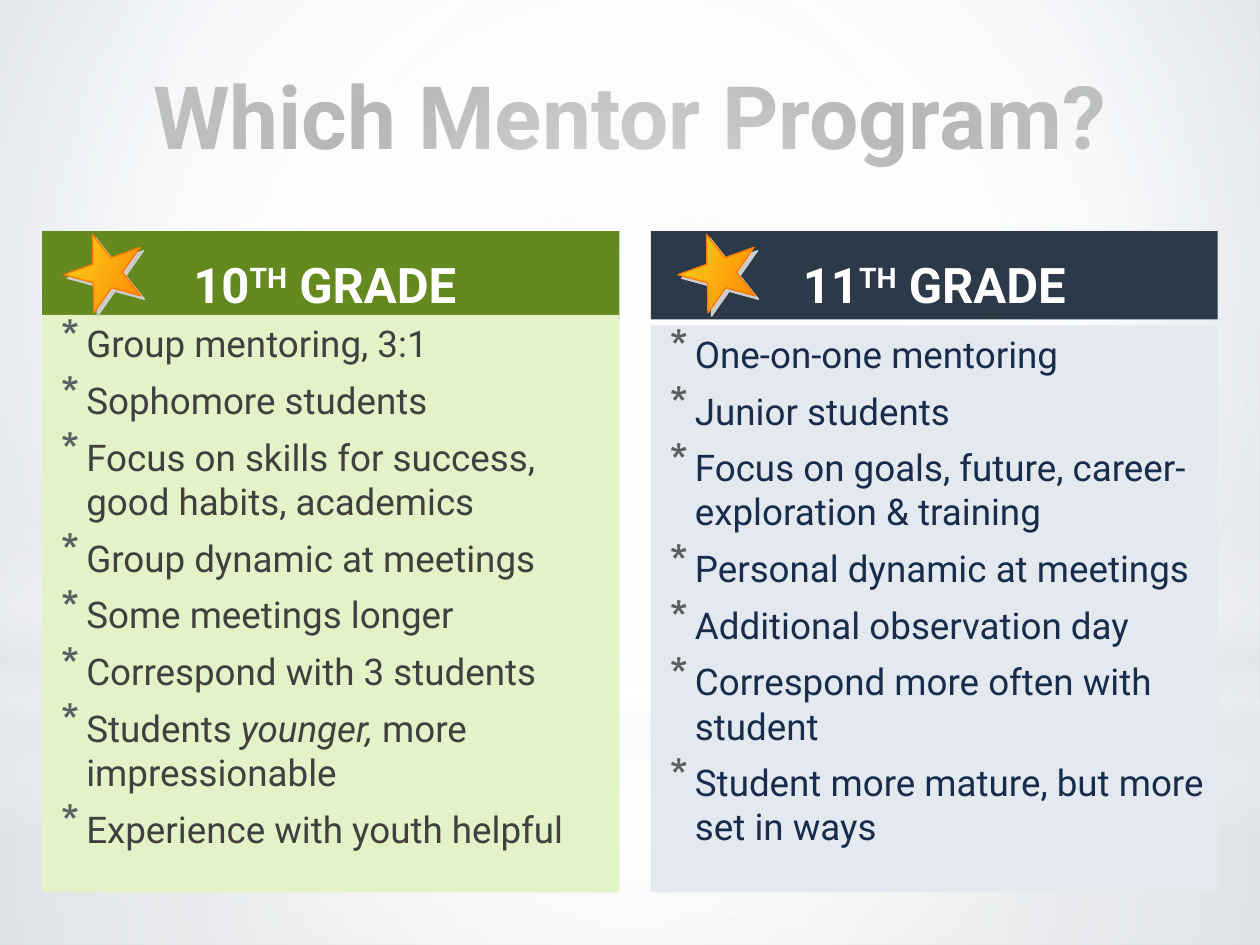
from dataclasses import dataclass

from pptx import Presentation
from pptx import oxml as ox
from pptx import util as u
from pptx.dml import color as col
from pptx.enum import shapes as sh, text as tx
from pptx.oxml import ns

Cm, Pt = u.Cm, u.Pt


@dataclass(frozen=True)
class Theme:
    """Colours and type sizes of the slide."""
    font: str = "Roboto"
    ink: str = "404040"
    navy: str = "182C4B"
    white: str = "FFFFFF"
    mist: str = "E4E9EF"
    green: str = "63891F"
    lime: str = "E3F2C7"
    slate: str = "2B3949"
    mark: str = "586064"
    gold: str = "F9E11E"
    flame: str = "FF7900"
    shade: str = "CCCCCC"
    title: int = 50
    head: int = 28
    body: int = 21


T = Theme()


def rgb(code):
    """Turn a hex code into a colour."""
    return col.RGBColor.from_string(code)


def node(body):
    """Make a drawing element from its markup."""
    cut = min(i for i in (body.find(" "), body.find(">")) if i > 0)
    return ox.parse_xml(f"{body[:cut]} {ns.nsdecls('a')}{body[cut:]}")


def blend(item, stops, focus=None, angle=90):
    """Fill a part with a gradient of (place, colour, opacity) stops."""
    fill = item.fill
    fill.gradient()
    marks = "".join(
        f'<a:gs pos="{p * 1000}"><a:srgbClr val="{c}">'
        f'<a:alpha val="{a * 1000}"/></a:srgbClr></a:gs>' for p, c, a in stops)
    if focus:
        sides = " ".join(f'{k}="{v * 1000}"' for k, v in zip("ltrb", focus))
        way = f'<a:path path="circle"><a:fillToRect {sides}/></a:path>'
    else:
        way = f'<a:lin ang="{angle * 60000}" scaled="0"/>'
    old = item._element.find(".//" + ns.qn("a:gradFill"))
    new = node(f'<a:gradFill rotWithShape="1"><a:gsLst>{marks}</a:gsLst>{way}</a:gradFill>')
    old.getparent().replace(old, new)


def plain(slide, kind, box):
    """Add a shape with no line and no shadow."""
    part = slide.shapes.add_shape(kind, *map(Cm, box))
    part.shadow.inherit = False
    part.line.fill.background()
    return part


def backdrop(slide, box):
    """Paint the background and its soft layers."""
    left, top, wide, high = box
    mid = (50, 50, 50, 50)
    blend(slide.background._cSld and Ground(slide),
          [(0, "F4F4F4", 100), (60, T.white, 100), (100, T.shade, 100)], (20, 10, 20, 60))
    rect, oval = sh.MSO_SHAPE.RECTANGLE, sh.MSO_SHAPE.OVAL
    layers = [
        (rect, 14.17, 4.88, mid, [(0, T.white, 91), (37, T.white, 76), (100, T.mist, 79)]),
        (rect, 0, 14.17, mid, [(0, T.white, 89), (48, T.white, 62), (100, T.mist, 79)]),
        (rect, 10.46, 6.35, None, [(0, T.white, 0), (29, T.white, 30), (45, T.mist, 40),
                                   (55, T.white, 26), (65, T.mist, 60), (100, T.white, 0)]),
        (oval, 4.45, 14.17, mid, [(0, T.white, 100), (56, T.white, 0)]),
    ]
    for kind, down, tall, focus, stops in layers:
        blend(plain(slide, kind, (left, top + down, wide, tall)), stops, focus)


class Ground:
    """Pair the background fill with the slide element."""

    def __init__(self, slide):
        """Keep the fill and the element."""
        self.fill = slide.background.fill
        self._element = slide._element


def style(para, size, color, bold=False):
    """Set the font of a paragraph."""
    font = para.font
    font.name, font.size, font.bold = T.font, Pt(size), bold
    font.color.rgb = rgb(color)


def heading(slide, box, words):
    """Place the slide title."""
    title = slide.shapes.title
    title.left, title.top, title.width, title.height = map(Cm, box)
    title.text_frame.text = words
    para = title.text_frame.paragraphs[0]
    para.alignment = tx.PP_ALIGN.CENTER
    style(para, T.title, T.ink, True)


def panel(slide, box, color, anchor):
    """Add a filled text panel and return its frame."""
    part = plain(slide, sh.MSO_SHAPE.RECTANGLE, box)
    part.fill.solid()
    part.fill.fore_color.rgb = rgb(color)
    frame = part.text_frame
    frame.word_wrap = True
    frame.vertical_anchor = anchor
    return frame


def banner(slide, box, color, grade):
    """Add a column header with a raised ordinal."""
    para = panel(slide, box, color, tx.MSO_ANCHOR.BOTTOM).paragraphs[0]
    para.alignment = tx.PP_ALIGN.CENTER
    para.space_after = Pt(3)
    style(para, T.head, T.white, True)
    runs = [para.add_run() for _ in range(3)]
    for run, words in zip(runs, (grade, "TH", " GRADE ")):
        run.text = words
    runs[1].font._element.set("baseline", "30000")


def points(slide, box, fill, ink, items):
    """Add a starred list; text between underscores is italic."""
    frame = panel(slide, box, fill, tx.MSO_ANCHOR.TOP)
    for i, item in enumerate(items):
        para = frame.add_paragraph() if i else frame.paragraphs[0]
        para.alignment = tx.PP_ALIGN.LEFT
        para.space_before, para.space_after = Pt(4.2), Pt(3)
        style(para, T.body, ink)
        for j, words in enumerate(item.split("_")):
            run = para.add_run()
            run.text = words
            if j % 2:
                run.font.italic = True
        props = para._p.get_or_add_pPr()
        props.set("marL", str(Cm(0.64)))
        props.set("indent", str(-Cm(0.51)))
        bullet = (f'<a:buClr><a:srgbClr val="{T.mark}"/></a:buClr>',
                  '<a:buSzPct val="130000"/>', '<a:buChar char="*"/>')
        spot = props.index(props.find(ns.qn("a:defRPr")))
        for k, body in enumerate(bullet):
            props.insert(spot + k, node(body))


def star(slide, box):
    """Add a tilted star with a hard shadow."""
    part = plain(slide, sh.MSO_SHAPE.STAR_5_POINT, box)
    part.rotation = 340.2
    blend(part, [(0, T.gold, 100), (100, T.flame, 100)], angle=45)
    part.line.color.rgb = rgb(T.flame)
    part.line.width = Pt(0.75)
    part._element.spPr.find(ns.qn("a:effectLst")).append(node(
        f'<a:outerShdw dist="{Pt(2.8)}" dir="2700000" algn="ctr" rotWithShape="0">'
        f'<a:srgbClr val="{T.shade}"/></a:outerShdw>'))


def column(slide, box, drop, inset, grade, colors, items):
    """Build one program column: header, list and star."""
    left, top, wide, high = box
    dark, light, ink = colors
    banner(slide, (left, top, wide, 1.78), dark, grade)
    points(slide, (left, top + drop, wide, high - drop), light, ink, items)
    star(slide, (left + inset, top + 0.02, 1.63, 1.5))


def main():
    """Build and save the slide."""
    deck = Presentation()
    deck.slide_width, deck.slide_height = Cm(25.4), Cm(19.05)
    slide = deck.slides.add_slide(deck.slide_layouts[5])
    backdrop(slide, (0, 0, 25.4, 19.05))
    heading(slide, (0.42, 0.88, 24.56, 2.87), "Which Mentor Program?")
    column(slide, (0.85, 4.66, 11.64, 13.33), 1.69, 0.45, "10", (T.green, T.lime, T.ink), [
        "Group mentoring, 3:1", "Sophomore students",
        "Focus on skills for success, good habits, academics",
        "Group dynamic at meetings", "Some meetings longer",
        "Correspond with 3 students", "Students _younger,_ more impressionable",
        "Experience with youth helpful"])
    column(slide, (13.12, 4.66, 11.43, 13.33), 1.9, 0.56, " 11", (T.slate, T.mist, T.navy), [
        "One-on-one mentoring", "Junior students",
        "Focus on goals, future, career-exploration & training",
        "Personal dynamic at meetings", "Additional observation day",
        "Correspond more often with student", "Student more mature, but more set in ways"])
    deck.save("out.pptx")


if __name__ == "__main__":
    main()
